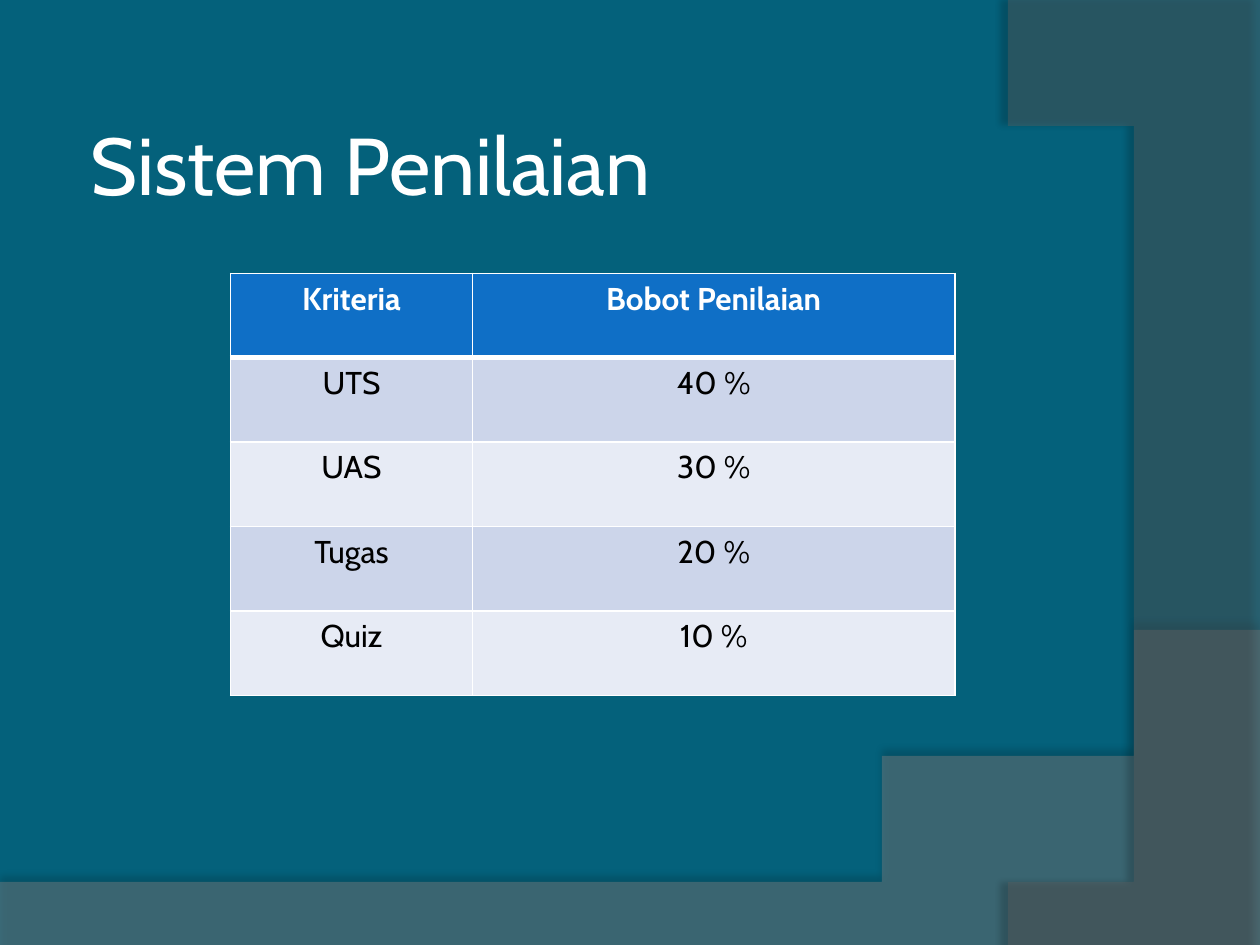
"""Build the grading-system slide with its curved backdrop and weight table."""
from dataclasses import dataclass

import lxml.etree
import pptx
import pptx.dml.color
import pptx.enum.text
import pptx.oxml
import pptx.oxml.ns
import pptx.util

Inches = pptx.util.Inches
Point = tuple[float, float]

COLORS = {
    "background": "04617B", "wave": "7F7F7F", "arc": "5E5E5E",
    "white": "FFFFFF", "black": "000000",
    "header": "0F6FC6", "odd": "CCD5EA", "even": "E7EBF5",
}
TITLE_FONT = {"name": "Cabin", "size": pptx.util.Pt(46), "bold": False}
CELL_FONT = {"name": "Cabin", "size": pptx.util.Pt(18)}
TITLE_BOX = {"left": Inches(0.67), "top": Inches(0.67),
             "width": Inches(8.17), "height": Inches(1.25)}
TITLE_FRAME = {
    "margin_left": Inches(0.05), "margin_right": Inches(0.05),
    "margin_top": Inches(0.05), "margin_bottom": Inches(0.05),
    "vertical_anchor": pptx.enum.text.MSO_ANCHOR.MIDDLE,
    "word_wrap": True, "auto_size": pptx.enum.text.MSO_AUTO_SIZE.NONE,
}
ROWS = [("Kriteria", "Bobot Penilaian"), ("UTS", "40 %"), ("UAS", "30 %"),
        ("Tugas", "20 %"), ("Quiz", "10 %")]
COLUMN_WIDTHS = (1.92, 3.83)
ROW_HEIGHT = 0.67


@dataclass
class Swoosh:
    """A translucent panel with one curved edge and a soft shadow."""
    color: str
    opacity: int
    before: list[Point]
    curve: tuple[Point, Point, Point, Point]
    shadow_opacity: int
    shadow_distance: float
    shadow_angle: int


SWOOSHES = [
    Swoosh("wave", 45, [(0, 7.05), (0, 7.5), (10, 7.5)],
           ((10, 5.2), (5.59, 7.29), (3.91, 7.19), (0, 7.05)), 35, 3.5, 270),
    Swoosh("arc", 40, [(10, 0.02), (10, 7.5)],
           ((8.21, 7.5), (9.35, 6.19), (10.18, 3), (8, 0)), 45, 4, 180),
]


def rgb(name: str) -> pptx.dml.color.RGBColor:
    """Return a palette colour."""
    return pptx.dml.color.RGBColor.from_string(COLORS[name])


def apply(target: object, values: dict) -> None:
    """Set each named attribute on the target."""
    for name, value in values.items():
        setattr(target, name, value)


def bezier(curve: tuple[Point, Point, Point, Point], steps: int = 60) -> list[Point]:
    """Sample a cubic curve at equal parameter steps."""
    points = []
    for i in range(steps + 1):
        t = i / steps
        weights = ((1 - t) ** 3, 3 * t * (1 - t) ** 2, 3 * t * t * (1 - t), t ** 3)
        points.append(tuple(sum(w * pt[axis] for w, pt in zip(weights, curve))
                            for axis in (0, 1)))
    return points


def draw_swoosh(s, swoosh: Swoosh) -> None:
    """Draw one backdrop panel."""
    start, *rest = swoosh.before + bezier(swoosh.curve)
    builder = s.shapes.build_freeform(*start, scale=Inches(1))
    builder.add_line_segments(rest, close=True)
    sp = builder.convert_to_shape()
    sp.fill.solid()
    sp.fill.fore_color.rgb = rgb(swoosh.color)
    sp.line.fill.background()
    color = sp.fill._xPr.find(".//" + pptx.oxml.ns.qn("a:srgbClr"))
    lxml.etree.SubElement(color, pptx.oxml.ns.qn("a:alpha"), val=str(swoosh.opacity * 1000))
    sp._element.spPr.append(pptx.oxml.parse_xml(
        f'<a:effectLst {pptx.oxml.ns.nsdecls("a")}>'
        f'<a:outerShdw blurRad="{pptx.util.Pt(4)}" dist="{pptx.util.Pt(swoosh.shadow_distance)}" '
        f'dir="{swoosh.shadow_angle * 60000}" algn="ctr" rotWithShape="0">'
        f'<a:srgbClr val="{COLORS["black"]}"><a:alpha val="{swoosh.shadow_opacity * 1000}"/>'
        '</a:srgbClr></a:outerShdw></a:effectLst>'))


def set_borders(cell, row: int) -> None:
    """Give a cell white borders, with a thick rule under the header."""
    widths = {"L": 1, "R": 1, "T": 3 if row == 1 else 1, "B": 3 if row == 0 else 1}
    for side, width in widths.items():
        cell._tc.get_or_add_tcPr().append(pptx.oxml.parse_xml(
            f'<a:ln{side} {pptx.oxml.ns.nsdecls("a")} w="{pptx.util.Pt(width)}"><a:solidFill>'
            f'<a:srgbClr val="{COLORS["white"]}"/></a:solidFill></a:ln{side}>'))


def draw_table(s) -> None:
    """Draw the criteria and their weights."""
    table = s.shapes.add_table(
        len(ROWS), len(COLUMN_WIDTHS), Inches(1.83), Inches(2.17),
        Inches(sum(COLUMN_WIDTHS)), Inches(ROW_HEIGHT * len(ROWS))).table
    for column, width in zip(table.columns, COLUMN_WIDTHS):
        column.width = Inches(width)
    for i, texts in enumerate(ROWS):
        table.rows[i].height = Inches(ROW_HEIGHT)
        fill = "header" if i == 0 else ("odd" if i % 2 else "even")
        for j, text in enumerate(texts):
            cell = table.cell(i, j)
            set_borders(cell, i)
            cell.fill.solid()
            cell.fill.fore_color.rgb = rgb(fill)
            p = cell.text_frame.paragraphs[0]
            p.alignment = pptx.enum.text.PP_ALIGN.CENTER
            r = p.add_run()
            r.text = text
            apply(r.font, CELL_FONT | {"bold": i == 0})
            r.font.color.rgb = rgb("black" if i else "white")


def draw_title(s) -> None:
    """Place and format the title."""
    title = s.shapes.title
    apply(title, TITLE_BOX)
    tf = title.text_frame
    apply(tf, TITLE_FRAME)
    p = tf.paragraphs[0]
    p.alignment = pptx.enum.text.PP_ALIGN.LEFT
    r = p.add_run()
    r.text = "Sistem Penilaian"
    apply(r.font, TITLE_FONT)
    r.font.color.rgb = rgb("white")


def main() -> None:
    """Build and save the slide."""
    prs = pptx.Presentation()
    apply(prs, {"slide_width": Inches(10), "slide_height": Inches(7.5)})
    s = prs.slides.add_slide(prs.slide_layouts[5])
    s.background.fill.solid()
    s.background.fill.fore_color.rgb = rgb("background")
    for swoosh in SWOOSHES:
        draw_swoosh(s, swoosh)
    draw_title(s)
    draw_table(s)
    prs.save("out.pptx")


if __name__ == "__main__":
    main()
